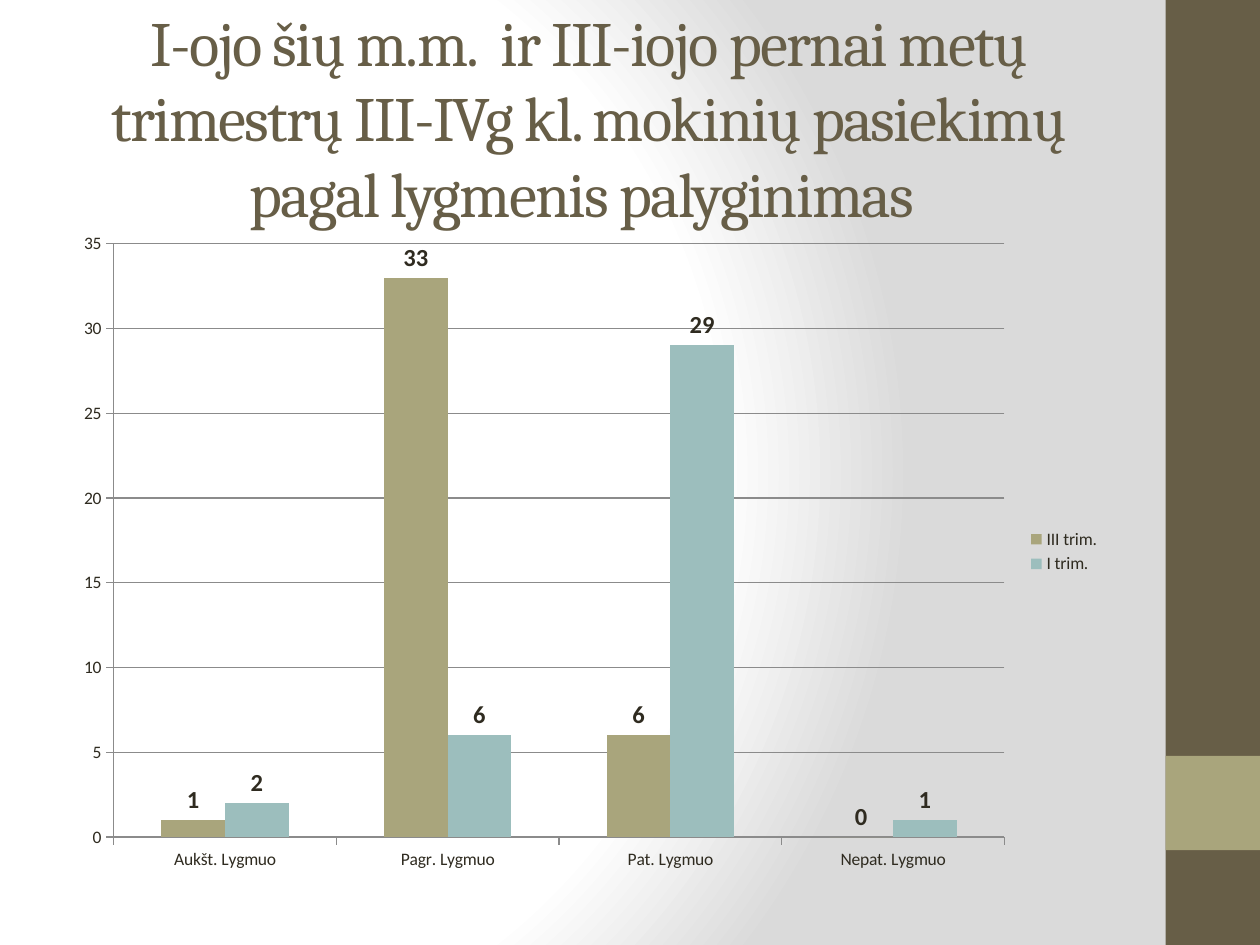
"""Build a slide comparing pupil achievement levels across two trimesters."""
import pptx
import pptx.util
import pptx.chart.data
import pptx.dml.color
import pptx.enum.chart
import pptx.enum.shapes
import pptx.enum.text
import pptx.oxml
import pptx.oxml.ns
from pptx.util import Cm

COLORS = {
    "brown": "675E47",
    "olive": "A9A57C",
    "teal": "9CBEBD",
    "text": "2F2B20",
    "line": "8B8B8B",
    "white": "FFFFFF",
    "gray": "DADADA",
}


def color(name):
    return pptx.dml.color.RGBColor.from_string(COLORS[name])


def set_format(target, values):
    for name, value in values.items():
        setattr(target, name, value)


presentation = pptx.Presentation()
set_format(presentation, {"slide_width": Cm(25.4), "slide_height": Cm(19.05)})
slide = presentation.slides.add_slide(presentation.slide_layouts[6])

slide.background.fill.gradient()
gradient = slide.background._cSld.bg.bgPr.find(pptx.oxml.ns.qn("a:gradFill"))
stops = "".join(
    f'<a:gs pos="{position * 1000}"><a:srgbClr val="{COLORS[name]}"/></a:gs>'
    for position, name in ((0, "white"), (75, "white"), (100, "gray"))
)
radial = pptx.oxml.parse_xml(
    f'<a:gradFill {pptx.oxml.ns.nsdecls("a")} rotWithShape="1"><a:gsLst>{stops}</a:gsLst>'
    '<a:path path="circle"><a:fillToRect l="20000" t="50000" r="100000" b="50000"/></a:path>'
    "</a:gradFill>"
)
gradient.getparent().replace(gradient, radial)

for top, width, height, name in ((0, 1.9, 19.05, "brown"), (15.24, 1.9, 1.9, "olive")):
    band = slide.shapes.add_shape(
        pptx.enum.shapes.MSO_SHAPE.RECTANGLE, Cm(23.5), Cm(top), Cm(width), Cm(height)
    )
    band.shadow.inherit = False
    band.fill.solid()
    band.fill.fore_color.rgb = color(name)
    band.line.fill.background()

title = slide.shapes.add_textbox(Cm(1.27), Cm(0.76), Cm(21.17), Cm(3.18))
set_format(title.text_frame, {
    "word_wrap": True,
    "vertical_anchor": pptx.enum.text.MSO_ANCHOR.MIDDLE,
})
paragraph = title.text_frame.paragraphs[0]
paragraph.alignment = pptx.enum.text.PP_ALIGN.CENTER
run = paragraph.add_run()
run.text = (
    "I-ojo šių m.m.  ir III-iojo pernai metų trimestrų III-IVg kl. "
    "mokinių pasiekimų pagal lygmenis palyginimas "
)
set_format(run.font, {"name": "Cambria", "size": pptx.util.Pt(36)})
run.font.color.rgb = color("brown")
run.font._element.set("spc", "-100")

chart_data = pptx.chart.data.CategoryChartData()
chart_data.categories = ["Aukšt. Lygmuo", "Pagr. Lygmuo", "Pat. Lygmuo", "Nepat. Lygmuo"]
chart_data.add_series("III trim.", (1, 33, 6, 0))
chart_data.add_series("I trim.", (2, 6, 29, 1))
chart = slide.shapes.add_chart(
    pptx.enum.chart.XL_CHART_TYPE.COLUMN_CLUSTERED,
    Cm(1.27), Cm(4.45), Cm(21.17), Cm(13.34), chart_data,
).chart
set_format(chart, {"has_title": False, "has_legend": True})
set_format(chart.font, {"name": "Calibri", "size": pptx.util.Pt(10)})
chart.font.color.rgb = color("text")
set_format(chart.legend, {
    "position": pptx.enum.chart.XL_LEGEND_POSITION.RIGHT,
    "include_in_layout": False,
})

set_format(chart.value_axis, {
    "minimum_scale": 0,
    "maximum_scale": 35,
    "major_unit": 5,
    "has_major_gridlines": True,
})
for axis in (chart.category_axis, chart.value_axis):
    axis.major_tick_mark = pptx.enum.chart.XL_TICK_MARK.OUTSIDE
for lined in (chart.category_axis, chart.value_axis, chart.value_axis.major_gridlines):
    lined.format.line.color.rgb = color("line")
    lined.format.line.width = pptx.util.Pt(0.75)

plot = chart.plots[0]
set_format(plot, {"gap_width": 150, "overlap": 0, "vary_by_categories": False})
for series, name in zip(plot.series, ("olive", "teal")):
    series.format.fill.solid()
    series.format.fill.fore_color.rgb = color(name)
    set_format(series.data_labels, {
        "show_value": True,
        "position": pptx.enum.chart.XL_LABEL_POSITION.OUTSIDE_END,
    })
    set_format(series.data_labels.font, {
        "name": "Calibri", "size": pptx.util.Pt(14), "bold": True,
    })
    series.data_labels.font.color.rgb = color("text")

presentation.save("out.pptx")
